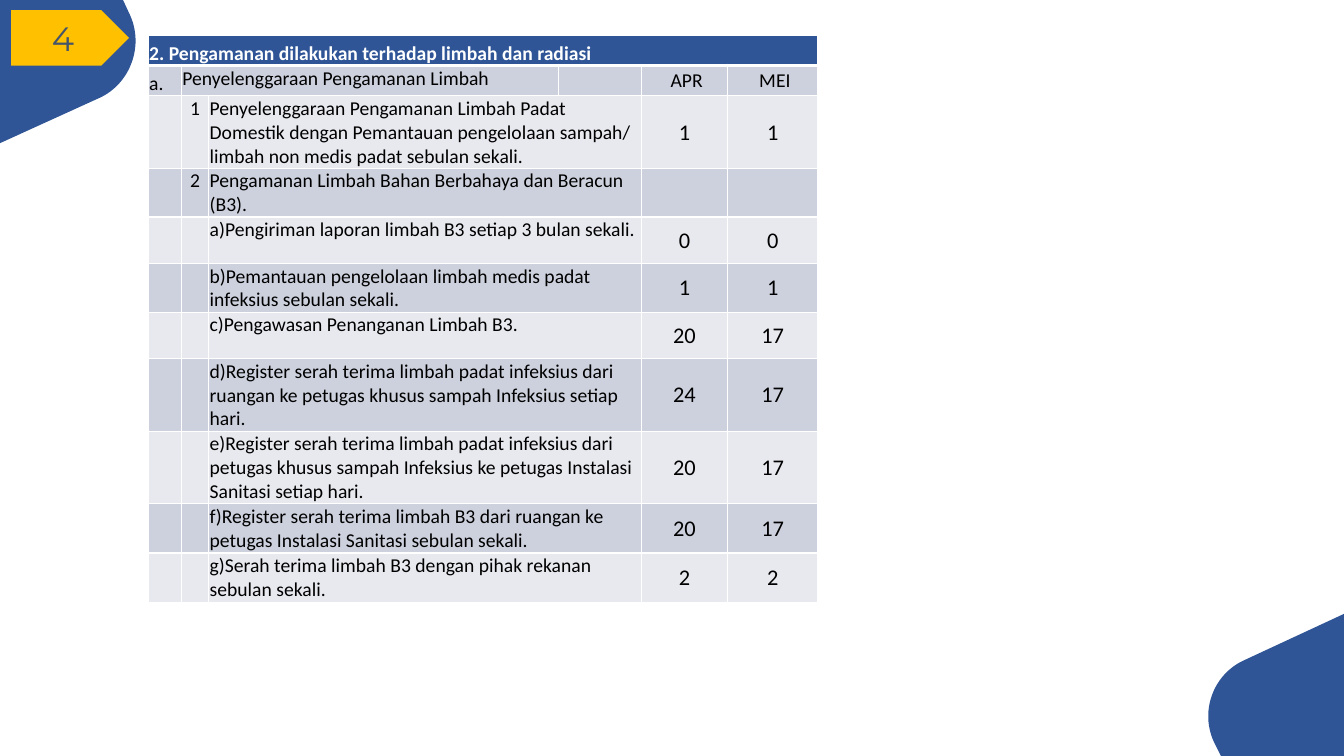
import lxml.etree
import pptx
import pptx.dml.color
import pptx.enum.shapes
import pptx.enum.text
import pptx.oxml.ns
import pptx.util

Inches = pptx.util.Inches
Pt = pptx.util.Pt
ALIGN = pptx.enum.text.PP_ALIGN
ANCHOR = pptx.enum.text.MSO_ANCHOR

BLUE, YELLOW, SLATE = "2F5597", "FFC000", "44546A"
WHITE, BLACK = "FFFFFF", "000000"
BANDS = ("E8E9EF", "CDD1DD")

COLUMN_WIDTHS = (0.33, 0.27, 3.47, 0.82, 0.86, 0.89)
ROW_HEIGHTS = (0.3, 0.3, 0.68, 0.46, 0.46, 0.46, 0.46, 0.68, 0.68, 0.49, 0.49)
HEADING = "2. Pengamanan dilakukan terhadap limbah dan radiasi"
SECTION = ("a.", "Penyelenggaraan Pengamanan Limbah", "", "", " APR", " MEI")
# Number, activity, April, May
ACTIVITIES = (
    ("1", "Penyelenggaraan Pengamanan Limbah Padat Domestik dengan Pemantauan "
          "pengelolaan sampah/ limbah non medis padat sebulan sekali.", "1", "1"),
    ("2", "Pengamanan Limbah Bahan Berbahaya dan Beracun (B3).", "", ""),
    ("", "a)Pengiriman laporan limbah B3 setiap 3 bulan sekali.", "0", "0"),
    ("", "b)Pemantauan pengelolaan limbah medis padat infeksius sebulan sekali.", "1", "1"),
    ("", "c)Pengawasan Penanganan Limbah B3.", "20", "17"),
    ("", "d)Register serah terima limbah padat infeksius dari ruangan ke petugas "
         "khusus sampah Infeksius setiap hari.", "24", "17"),
    ("", "e)Register serah terima limbah padat infeksius dari petugas khusus sampah "
         "Infeksius ke petugas Instalasi Sanitasi setiap hari.", "20", "17"),
    ("", "f)Register serah terima limbah B3 dari ruangan ke petugas Instalasi "
         "Sanitasi sebulan sekali.", "20", "17"),
    ("", "g)Serah terima limbah B3 dengan pihak rekanan sebulan sekali.", "2", "2"),
)


def rgb(color):
    return pptx.dml.color.RGBColor.from_string(color)


def paint(shape, color):
    shape.shadow.inherit = False
    shape.fill.solid()
    shape.fill.fore_color.rgb = rgb(color)
    shape.line.fill.background()


def format_text(paragraph, size, font, color, bold=False):
    for run in paragraph.runs:
        run.font.size = Pt(size)
        run.font.name = font
        run.font.color.rgb = rgb(color)
        run.font.bold = bold


def curve_points(start, control_1, control_2, end, steps=24):
    """Return points along a cubic Bezier curve, both ends included."""
    points = []
    for step in range(steps + 1):
        t = step / steps
        weights = ((1 - t) ** 3, 3 * t * (1 - t) ** 2, 3 * t * t * (1 - t), t ** 3)
        points.append(tuple(
            sum(weight * value for weight, value in zip(weights, values))
            for values in zip(start, control_1, control_2, end)))
    return points


def add_corner(slide, before, curves, after):
    points = before + [point for curve in curves for point in curve_points(*curve)] + after
    builder = slide.shapes.build_freeform(
        Inches(points[0][0]), Inches(points[0][1]))
    builder.add_line_segments(
        [(Inches(x), Inches(y)) for x, y in points[1:]], close=True)
    paint(builder.convert_to_shape(), BLUE)


def add_page_tag(slide, number):
    tag = slide.shapes.add_shape(
        pptx.enum.shapes.MSO_SHAPE.PENTAGON,
        Inches(0.11), Inches(0.1), Inches(1.17), Inches(0.55))
    paint(tag, YELLOW)
    tag.text_frame.text = number
    tag.text_frame.vertical_anchor = ANCHOR.MIDDLE
    paragraph = tag.text_frame.paragraphs[0]
    paragraph.alignment = ALIGN.CENTER
    format_text(paragraph, 24.1, "Montserrat", SLATE)


def set_borders(cell, top, bottom):
    properties = cell._tc.get_or_add_tcPr()
    widths = (("lnL", 1), ("lnR", 1), ("lnT", top), ("lnB", bottom))
    for position, (side, width) in enumerate(widths):
        line = lxml.etree.Element(pptx.oxml.ns.qn("a:" + side), w=str(Pt(width)))
        fill = lxml.etree.SubElement(line, pptx.oxml.ns.qn("a:solidFill"))
        lxml.etree.SubElement(fill, pptx.oxml.ns.qn("a:srgbClr"), val=WHITE)
        properties.insert(position, line)


def fill_cell(cell, text, background, size=14, color=BLACK, bold=False,
              alignment=ALIGN.LEFT, anchor=ANCHOR.TOP):
    cell.margin_left = cell.margin_right = cell.margin_top = Inches(0.01)
    cell.margin_bottom = 0
    cell.vertical_anchor = anchor
    cell.fill.solid()
    cell.fill.fore_color.rgb = rgb(background)
    cell.text_frame.text = text
    paragraph = cell.text_frame.paragraphs[0]
    paragraph.alignment = alignment
    format_text(paragraph, size, "Calibri", color, bold)
    if not text:
        paragraph._p.get_or_add_endParaRPr().set("sz", str(size * 100))


def add_activity_table(slide):
    frame = slide.shapes.add_table(
        len(ROW_HEIGHTS), len(COLUMN_WIDTHS), Inches(1.47), Inches(0.35),
        Inches(sum(COLUMN_WIDTHS)), Inches(sum(ROW_HEIGHTS)))
    table = frame.table
    for column, width in zip(table.columns, COLUMN_WIDTHS):
        column.width = Inches(width)
    for row, height in zip(table.rows, ROW_HEIGHTS):
        row.height = Inches(height)

    rows = [(HEADING, "", "", "", "", ""), SECTION]
    rows += [("", number, activity, "", april, may)
             for number, activity, april, may in ACTIVITIES]
    for row, texts in enumerate(rows):
        for column, text in enumerate(texts):
            cell = table.cell(row, column)
            if row == 0:
                fill_cell(cell, text, BLUE, color=WHITE, bold=True, anchor=ANCHOR.BOTTOM)
            elif column >= 4:
                fill_cell(cell, text, BANDS[row % 2], size=14 if row == 1 else 16,
                          alignment=ALIGN.CENTER, anchor=ANCHOR.MIDDLE)
            else:
                numbered = row > 1 and column == 1
                fill_cell(cell, text, BANDS[row % 2],
                          alignment=ALIGN.CENTER if numbered else ALIGN.LEFT,
                          anchor=ANCHOR.BOTTOM if text == "a." else ANCHOR.TOP)
            set_borders(cell, top=3 if row == 1 else 1, bottom=3 if row == 0 else 1)

    table.cell(0, 0).merge(table.cell(0, 5))
    table.cell(1, 1).merge(table.cell(1, 2))
    for row in range(2, len(rows)):
        table.cell(row, 2).merge(table.cell(row, 3))


def main():
    presentation = pptx.Presentation()
    presentation.slide_width = Inches(13.33)
    presentation.slide_height = Inches(7.5)
    slide = presentation.slides.add_slide(presentation.slide_layouts[6])
    add_corner(slide, [(13.33, 7.5), (12.11, 7.5)],
               [((12.04, 7.36), (11.9, 7.06), (12.03, 6.69), (12.34, 6.55))],
               [(13.33, 6.09)])
    add_corner(slide, [(0, 0), (1.22, 0)],
               [((1.29, 0.15), (1.43, 0.46), (1.29, 0.83), (0.99, 0.97))],
               [(0, 1.42)])
    add_page_tag(slide, "4")
    add_activity_table(slide)
    presentation.save("out.pptx")


if __name__ == "__main__":
    main()
